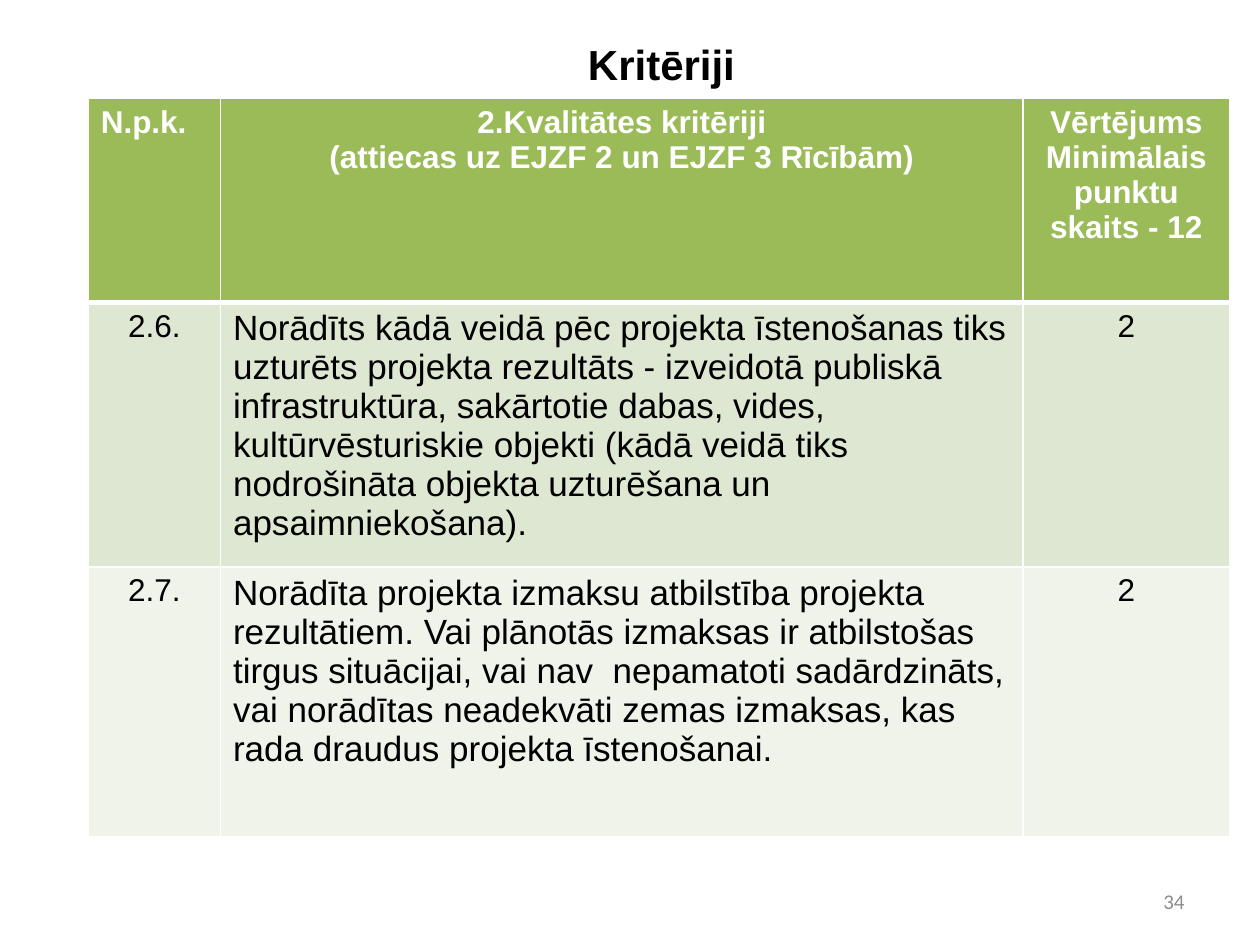
import pptx
import pptx.util
import pptx.dml.color
import pptx.enum.text
import pptx.oxml
import pptx.oxml.ns

Pt = pptx.util.Pt
ALIGN = pptx.enum.text.PP_ALIGN
MID = pptx.enum.text.MSO_ANCHOR.MIDDLE

TITLE = "Kritēriji"
PAGE = "34"
HEAD = [
    ["N.p.k."],
    ["2.Kvalitātes kritēriji", "(attiecas uz EJZF 2 un EJZF 3 Rīcībām)"],
    ["Vērtējums Minimālais punktu skaits - 12"],
]
BODY = [
    ("2.6.",
     "Norādīts kādā veidā pēc projekta īstenošanas tiks uzturēts projekta "
     "rezultāts - izveidotā publiskā infrastruktūra, sakārtotie dabas, vides, "
     "kultūrvēsturiskie objekti (kādā veidā tiks nodrošināta objekta "
     "uzturēšana un apsaimniekošana).",
     "2"),
    ("2.7.",
     "Norādīta projekta izmaksu atbilstība projekta rezultātiem. Vai plānotās "
     "izmaksas ir atbilstošas tirgus situācijai, vai nav  nepamatoti "
     "sadārdzināts, vai norādītas neadekvāti zemas izmaksas, kas rada draudus "
     "projekta īstenošanai.",
     "2"),
]
COLS = [75.6, 458.64, 118.08]
ROWS = [116.64, 100.8, 154.08]

THEME = {
    "font": "Arial", "foot": "Calibri",
    "black": "000000", "white": "FFFFFF", "gray": "8C8C8C",
    "head": "9BBB59", "bands": ["DEE7D1", "EFF3EA"],
    "title": 24, "label": 18, "text": 20, "page": 12,
    "thin": 1, "thick": 3,
}


def write(frame, lines, size, color, align, bold=False, font=THEME["font"]):
    frame.word_wrap = True
    for i, line in enumerate(lines):
        para = frame.paragraphs[0] if i == 0 else frame.add_paragraph()
        para.alignment = align
        run = para.add_run()
        run.text = line
        run.font.name = font
        run.font.size = Pt(size)
        run.font.bold = bold
        run.font.color.rgb = pptx.dml.color.RGBColor.from_string(color)


def label(slide, area, text, *style, **more):
    frame = slide.shapes.add_textbox(*map(Pt, area)).text_frame
    frame.vertical_anchor = MID
    write(frame, [text], *style, **more)


def border(cell, top, bottom):
    """Draw all four edges; they must precede the fill in the cell's XML."""
    thin = THEME["thin"]
    edges = [("L", thin), ("R", thin), ("T", top), ("B", bottom)]
    props = cell._tc.get_or_add_tcPr()
    for i, (side, width) in enumerate(edges):
        props.insert(i, pptx.oxml.parse_xml(
            f'<a:ln{side} {pptx.oxml.ns.nsdecls("a")} w="{Pt(width)}">'
            f'<a:solidFill><a:srgbClr val="{THEME["white"]}"/></a:solidFill>'
            f'</a:ln{side}>'))


def paint(cell, row):
    color = THEME["bands"][(row - 1) % 2] if row else THEME["head"]
    cell.fill.solid()
    cell.fill.fore_color.rgb = pptx.dml.color.RGBColor.from_string(color)
    thin, thick = THEME["thin"], THEME["thick"]
    border(cell, thick if row == 1 else thin, thick if row == 0 else thin)


def grid(slide):
    shape = slide.shapes.add_table(
        len(ROWS), len(COLS), Pt(50.4), Pt(56.16), Pt(sum(COLS)), Pt(sum(ROWS)))
    table = shape.table
    for col, width in zip(table.columns, COLS):
        col.width = Pt(width)
    for row, height in zip(table.rows, ROWS):
        row.height = Pt(height)

    for c, lines in enumerate(HEAD):
        write(table.cell(0, c).text_frame, lines, THEME["label"], THEME["white"],
              ALIGN.CENTER if c else ALIGN.LEFT, bold=True)
    for r, texts in enumerate(BODY, 1):
        for c, text in enumerate(texts):
            main = c == 1
            write(table.cell(r, c).text_frame, [text],
                  THEME["text" if main else "label"], THEME["black"],
                  ALIGN.LEFT if main else ALIGN.CENTER)
    for r in range(len(ROWS)):
        for c in range(len(COLS)):
            paint(table.cell(r, c), r)


def main():
    deck = pptx.Presentation()
    deck.slide_width, deck.slide_height = Pt(720), Pt(540)
    slide = deck.slides.add_slide(deck.slide_layouts[6])
    label(slide, (72, 16.56, 612, 39.6), TITLE,
          THEME["title"], THEME["black"], ALIGN.CENTER, bold=True)
    grid(slide)
    label(slide, (516, 500.5, 168, 28.75), PAGE,
          THEME["page"], THEME["gray"], ALIGN.RIGHT, font=THEME["foot"])
    deck.save("out.pptx")


if __name__ == "__main__":
    main()
